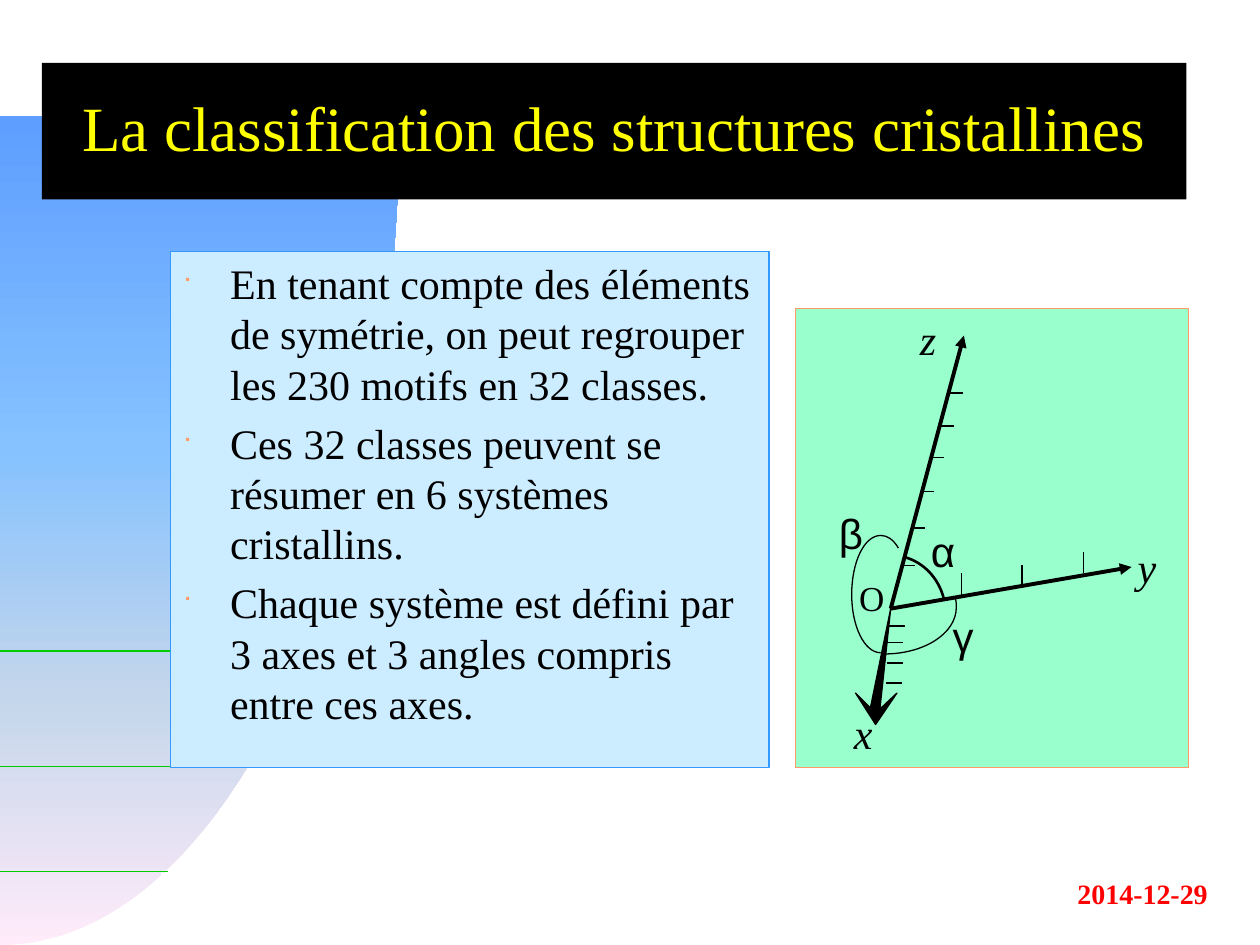
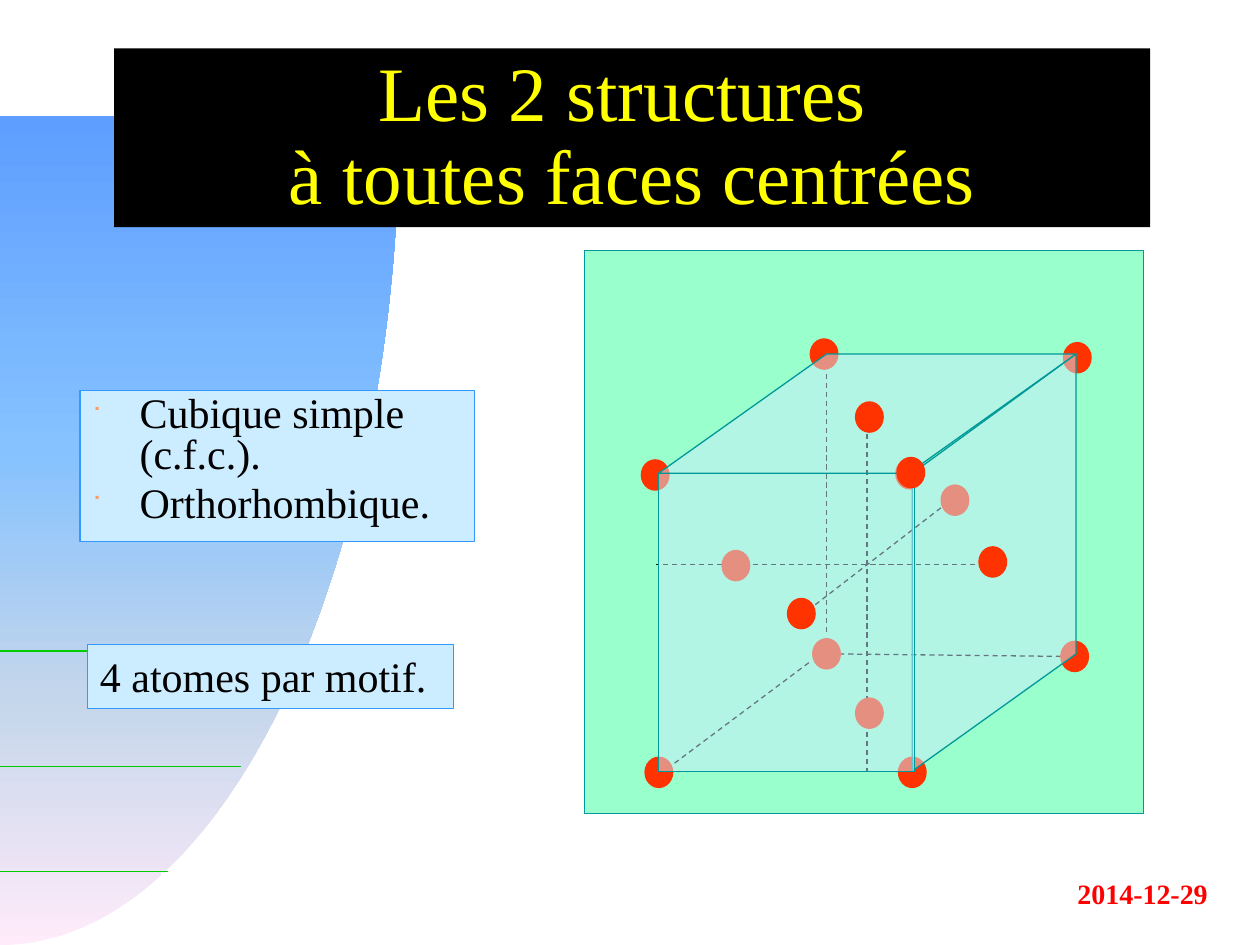
from copy import deepcopy

from lxml import etree
from pptx import Presentation
from pptx import util as u
from pptx.dml import color
from pptx.enum import dml, shapes, text
from pptx.oxml import ns

Pt = u.Pt
rgb = color.RGBColor.from_string
RECT = shapes.MSO_SHAPE.RECTANGLE
OVAL = shapes.MSO_SHAPE.OVAL
STRAIGHT = shapes.MSO_CONNECTOR.STRAIGHT
LEFT, CENTER, RIGHT = text.PP_ALIGN.LEFT, text.PP_ALIGN.CENTER, text.PP_ALIGN.RIGHT
SERIF, SANS = "Times New Roman", "Arial"
BLACK, WHITE, YELLOW, RED = "010000", "FFFFFF", "FFFF00", "FF0000"
PALE_BLUE, BLUE, MINT, TEAL = "CCECFF", "3399FF", "99FFCC", "009999"
ORANGE, GREEN, ATOM = "FF9966", "00CC00", "FF3300"
SKY = [(0, "FFEBFA"), (0.3, "C4D6EB"), (0.6, "85C2FF"), (1, "5E9EFF")]


def dress(shape, fill=None, line=None, width=0.75):
    if line:
        shape.line.color.rgb = rgb(line)
        shape.line.width = Pt(width)
    else:
        shape.line.fill.background()
    if shape.shape_type == shapes.MSO_SHAPE_TYPE.LINE:
        etree.SubElement(shape.element.spPr, ns.qn("a:effectLst"))
        return
    shape.shadow.inherit = False
    if fill:
        shape.fill.solid()
        shape.fill.fore_color.rgb = rgb(fill)
    else:
        shape.fill.background()


def write(shape, lines, size=24, hue=BLACK, font=SERIF, align=LEFT, spacing=None,
          bold=False, italic=False, bullets=False):
    frame = shape.text_frame
    frame.word_wrap = True
    frame.vertical_anchor = text.MSO_ANCHOR.TOP
    frame.text = "\n".join(lines)
    for index, paragraph in enumerate(frame.paragraphs):
        paragraph.alignment = align
        if spacing:
            paragraph.line_spacing = spacing
        if index:
            paragraph.space_before = Pt(size * 0.2)
        if bullets:
            properties = paragraph._p.get_or_add_pPr()
            properties.set("marL", str(Pt(27)))
            properties.set("indent", str(Pt(-27)))
            tint = etree.SubElement(properties, ns.qn("a:buClr"))
            etree.SubElement(tint, ns.qn("a:srgbClr"), val=ORANGE)
            etree.SubElement(properties, ns.qn("a:buSzPct"), val="50000")
            etree.SubElement(properties, ns.qn("a:buFont"), typeface="Wingdings")
            etree.SubElement(properties, ns.qn("a:buChar"), char="■")
        for run in paragraph.runs:
            run.font.name = font
            run.font.size = Pt(size)
            run.font.color.rgb = rgb(hue)
            run.font.bold = bold
            run.font.italic = italic


deck = Presentation()
deck.slide_width, deck.slide_height = Pt(720), Pt(540)
curved = []

contents = [
    ("La classification des structures cristallines", 36, (24, 36, 654, 78),
     ["En tenant compte des éléments de symétrie, on peut regrouper les 230 motifs en 32 classes.",
      "Ces 32 classes peuvent se résumer en 6 systèmes cristallins.",
      "Chaque système est défini par 3 axes et 3 angles compris entre ces axes."],
     (97.4, 143.6, 342, 295), None,
     (454.7, 176.4, 224.6, 262.1), ORANGE),
    ("Les 2 structures \và toutes faces centrées", 44, (65.3, 27.6, 592, 102.2),
     ["Cubique simple (c.f.c.).", "Orthorhombique."],
     (45.7, 223.2, 225.7, 86.4), 0.8,
     (334.1, 143.2, 319.5, 321.8), TEAL),
]

for heading, heading_size, band_area, points, body_area, spacing, panel_area, edge in contents:
    slide = deck.slides.add_slide(deck.slide_layouts[6])

    outline = slide.shapes.build_freeform(0, Pt(540))
    sail_points = [(126, 540), (228.2, 328.3), (228.2, 66.2), (0, 66.2)]
    outline.add_line_segments([(Pt(x), Pt(y)) for x, y in sail_points])
    sail = outline.convert_to_shape()
    curved.append((sail, 1))
    dress(sail)
    sail.fill.gradient()
    sail.fill.gradient_angle = 90
    stop_list = sail.element.xpath(".//a:gsLst")[0]
    for _ in range(len(SKY) - len(stop_list)):
        stop_list.append(deepcopy(stop_list[0]))
    for stop, (position, hue) in zip(sail.fill.gradient_stops, SKY):
        stop.position = position
        stop.color.rgb = rgb(hue)

    for length, y in ((96, 498), (138, 438), (174, 372)):
        dress(slide.shapes.add_connector(STRAIGHT, 0, Pt(y), Pt(length), Pt(y)), line=GREEN)

    date = slide.shapes.add_textbox(Pt(535.2), Pt(497.3), Pt(162), Pt(26.6))
    write(date, ["2014-12-29"], 16, RED, align=RIGHT, bold=True)
    dress(slide.shapes.add_shape(RECT, Pt(92), Pt(498.6), Pt(135.5), Pt(26.6)), WHITE)

    band = slide.shapes.add_shape(RECT, *map(Pt, band_area))
    dress(band, BLACK)
    write(band, [heading], heading_size, YELLOW, align=CENTER, spacing=0.9)
    band.text_frame.vertical_anchor = text.MSO_ANCHOR.MIDDLE

    body = slide.shapes.add_shape(RECT, *map(Pt, body_area))
    dress(body, PALE_BLUE, BLUE)
    write(body, points, spacing=spacing, bullets=True)

    dress(slide.shapes.add_shape(RECT, *map(Pt, panel_area)), MINT, edge)

axes_slide, cube_slide = deck.slides

for tip in ((550.8, 191.8), (646.6, 324)):
    axis = axes_slide.shapes.add_connector(STRAIGHT, Pt(509), Pt(347.8), *map(Pt, tip))
    dress(axis, line=BLACK, width=2.25)
    etree.SubElement(axis.line._get_or_add_ln(), ns.qn("a:tailEnd"), type="triangle")

z_ticks = [(515.5, 323.3), (521.3, 301.7), (526.3, 280.8), (532.1, 261.4), (537.8, 243.4), (542.9, 224.6)]
y_ticks = [(549.4, 339.8), (584, 334.8), (619.2, 327.6)]
x_ticks = [(507.6, 357.8, 0.75), (506.9, 367.2, 0.75), (506.9, 378.7, 1), (506.2, 390.2, 1.5)]
ticks = [(x, y, 7.2, 0, 0.75) for x, y in z_ticks]
ticks += [(x, y, 0, -12.2, 0.75) for x, y in y_ticks]
ticks += [(x, y, 9.4, 0, width) for x, y, width in x_ticks]
for x, y, dx, dy, width in ticks:
    tick = axes_slide.shapes.add_connector(STRAIGHT, Pt(x), Pt(y), Pt(x + dx), Pt(y + dy))
    dress(tick, line=BLACK, width=width)

x_shaft = [(509, 347.8), (496.8, 407.5), (502.6, 407.5), (509, 347.8)]
x_head = [(488.9, 396), (500.4, 407.5), (512.6, 396), (500.4, 414), (488.9, 396)]
alpha = [(516.2, 318.2), (527.8, 321.1), (536.4, 330.5), (539.3, 342)]
beta = [(513.4, 313.2), (510.5, 308.2), (506.9, 306), (503.3, 306), (493.9, 306),
        (486.7, 321.1), (486.7, 339.8), (486.7, 357.8), (493.9, 373), (503.3, 373)]
gamma = [(505.4, 373.7), (527.8, 373.7), (546.5, 362.2), (546.5, 347),
         (546.5, 345.6), (546.5, 343.4), (545.8, 341.3)]
for corners, fill, width, bends in (
    (x_shaft, BLACK, 0.75, 0), (x_head, BLACK, 0.75, 0),
    (alpha, None, 1.5, 1), (beta, None, 0.75, 3), (gamma, None, 0.75, 2),
):
    start, *others = [(Pt(x), Pt(y)) for x, y in corners]
    outline = axes_slide.shapes.build_freeform(*start)
    outline.add_line_segments(others, close=False)
    figure = outline.convert_to_shape()
    dress(figure, fill, BLACK, width)
    curved.append((figure, bends))

for letter, x, y, width, size, font, italic in (
    ("O", 483.8, 325.7, 29.5, 20, SERIF, False),
    ("y", 643, 306, 40.3, 24, SERIF, True),
    ("z", 518.6, 175.7, 28, 24, SERIF, True),
    ("x", 480.8, 400.6, 33.8, 24, SERIF, True),
    ("α", 524.9, 296.6, 41, 24, SANS, False),
    ("β", 472.3, 286.6, 29.5, 24, SANS, False),
    ("γ", 537.3, 345.6, 28, 24, SANS, False),
):
    label = axes_slide.shapes.add_textbox(Pt(x), Pt(y), Pt(width), Pt(size * 1.5))
    write(label, [letter], size, font=font, italic=italic)

atom_count = cube_slide.shapes.add_shape(RECT, Pt(50), Pt(368.2), Pt(209), Pt(36.7))
dress(atom_count, PALE_BLUE, BLUE)
write(atom_count, ["4 atomes par motif."])

for ends in (
    (472.5, 213.8, 472.5, 362.2), (479.5, 373.7, 607, 375.1), (462.2, 378.7, 385.2, 436.3),
    (495.4, 237.6, 495.4, 440.6), (453.6, 355, 544.3, 285.1), (567.4, 322.6, 375.1, 322.6),
):
    hidden_edge = cube_slide.shapes.add_connector(STRAIGHT, *map(Pt, ends))
    dress(hidden_edge, line=BLACK)
    hidden_edge.line.dash_style = dml.MSO_LINE.DASH

back_atoms = [(464.4, 365), (463, 193.7), (607.7, 195.8), (606.2, 366.5), (366.5, 262.8), (368.6, 432.7),
              (513.4, 432.7), (511.9, 262.1), (537.8, 277.2), (488.9, 398.9), (412.6, 314.6)]
front_atoms = [(450, 342), (488.9, 229.7), (512.6, 261.4), (559.4, 312.5)]
top_face = [(472.3, 202.3), (614.9, 202.3), (519.1, 270.5), (376.2, 270.5)]
side_face = [(614.9, 202.3), (614.9, 373.7), (521.3, 440.6), (521.3, 270.5)]
front_face = (376.2, 270.5, 146.2, 170.3)
for atoms, slanted, upright in (
    (back_atoms, [top_face, side_face], [front_face]),
    (front_atoms, [], []),
):
    for x, y in atoms:
        dress(cube_slide.shapes.add_shape(OVAL, Pt(x), Pt(y), Pt(15.8), Pt(17.3)), ATOM, ATOM)
    faces = []
    for corners in slanted:
        start, *others = [(Pt(x), Pt(y)) for x, y in corners]
        outline = cube_slide.shapes.build_freeform(*start)
        outline.add_line_segments(others)
        faces.append(outline.convert_to_shape())
    faces += [cube_slide.shapes.add_shape(RECT, *map(Pt, area)) for area in upright]
    for face in faces:
        dress(face, PALE_BLUE, TEAL)
        tint = face.element.xpath("./p:spPr/a:solidFill/a:srgbClr")[0]
        etree.SubElement(tint, ns.qn("a:alpha"), val="50000")

for figure, bends in curved:
    segments = figure.element.xpath(".//a:lnTo")
    for bend in range(bends):
        trio = segments[bend * 3:bend * 3 + 3]
        bezier = etree.Element(ns.qn("a:cubicBezTo"))
        trio[0].addprevious(bezier)
        for segment in trio:
            bezier.append(segment[0])
            segment.getparent().remove(segment)

deck.save("out.pptx")
